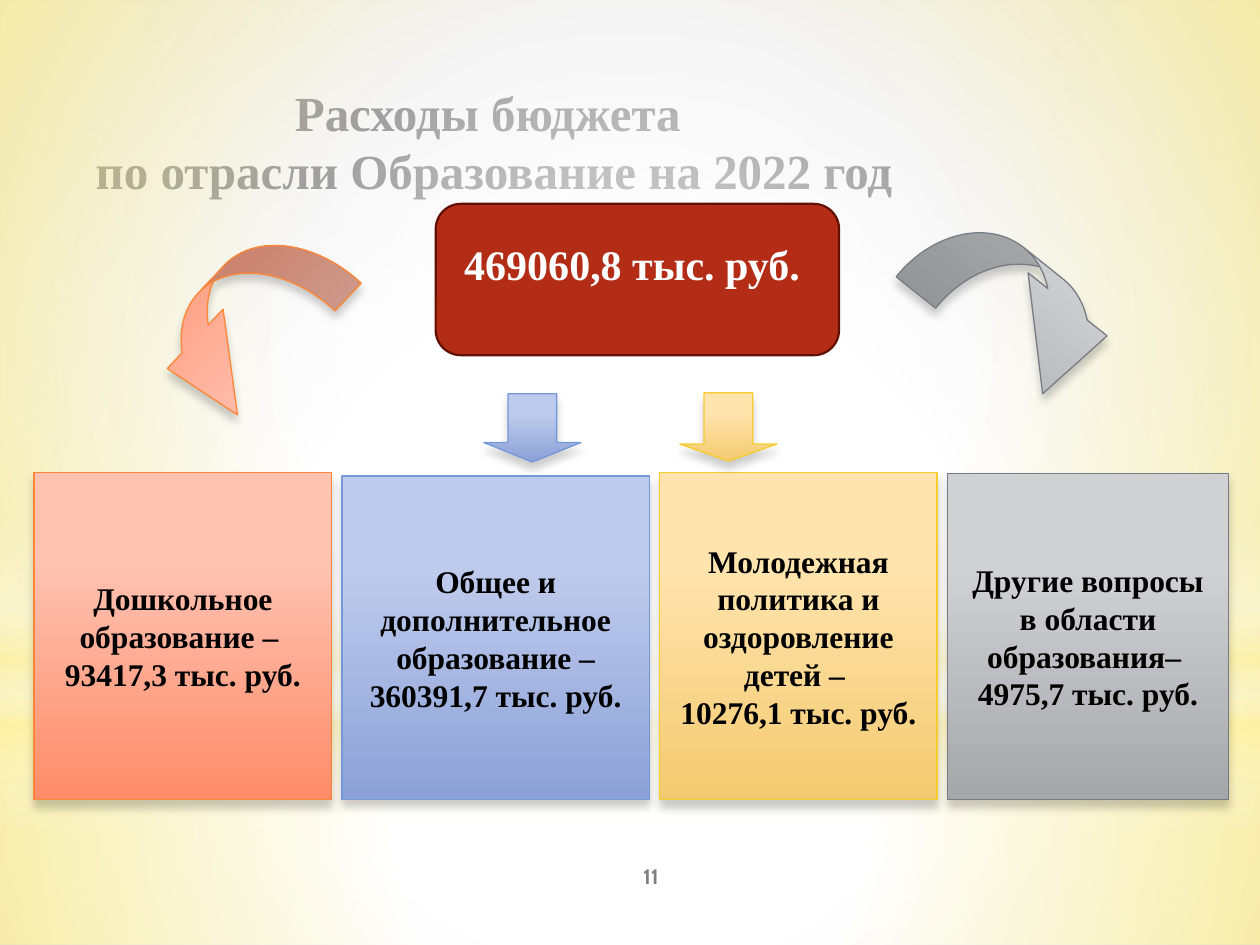
from pptx import Presentation
from pptx.dml.color import RGBColor
from pptx.enum.shapes import MSO_SHAPE as Kind
from pptx.enum.text import MSO_ANCHOR, MSO_AUTO_SIZE, PP_ALIGN
from pptx.oxml import parse_xml
from pptx.oxml.ns import nsdecls
from pptx.util import Pt

hues = {
    "white": "FFFFFF", "mist": "D1D1D1", "cream": "FFF39D",
    "black": "000000", "page": "808080", "red": "B32C16", "wine": "610F01",
    "coral": ("FFC1B0", "FE8C69", "FE8637"),
    "blue": ("BFCBED", "8CA1D7", "7598D9"),
    "gold": ("FFE4AE", "F4CA70", "F5CD2D"),
    "gray": ("D0D1D3", "A5A7AB", "777C84"),
}


def blend(old, stops, rect=None):
    marks = "".join(
        f'<a:gs pos="{at * 1000}"><a:srgbClr val="{hue}">'
        f'<a:alpha val="{alpha * 1000}"/></a:srgbClr></a:gs>'
        for at, hue, alpha in stops)
    if rect:
        sides = " ".join(f'{s}="{v * 1000}"' for s, v in zip("ltrb", rect))
        way = f'<a:path path="circle"><a:fillToRect {sides}/></a:path>'
    else:
        way = '<a:lin ang="5400000" scaled="0"/>'
    old.getparent().replace(old, parse_xml(
        f'<a:gradFill {nsdecls("a")} rotWithShape="1">'
        f'<a:gsLst>{marks}</a:gsLst>{way}</a:gradFill>'))


def write(shape, lines, size, hue, face, pads):
    frame = shape.text_frame
    form = {"word_wrap": True, "auto_size": MSO_AUTO_SIZE.NONE,
            "vertical_anchor": MSO_ANCHOR.MIDDLE}
    sides = ("margin_left", "margin_top", "margin_right", "margin_bottom")
    form.update(zip(sides, map(Pt, pads)))
    for key, val in form.items():
        setattr(frame, key, val)
    frame.text = "\n".join(lines)
    for para in frame.paragraphs:
        para.alignment = PP_ALIGN.CENTER
        for run in para.runs:
            for key, val in {"size": Pt(size), "bold": True, "name": face}.items():
                setattr(run.font, key, val)
            run.font.color.rgb = RGBColor.from_string(hues[hue])


deck = Presentation()
deck.slide_width, deck.slide_height = Pt(720), Pt(540)
slide = deck.slides.add_slide(deck.slide_layouts[5])
shapes = slide.shapes
serif = "Times New Roman"
white, cream = hues["white"], hues["cream"]
mid = (50, 50, 50, 50)

fill = slide.background.fill
fill.solid()
blend(slide.background._cSld.find(".//{*}bgPr/{*}solidFill"),
      [(0, white, 100), (42, white, 100), (100, hues["mist"], 100)],
      (24, 44, 24, 12))

layers = [
    (Kind.RECTANGLE, 402, 138,
     [(0, white, 91), (37, white, 76), (100, cream, 79)], mid),
    (Kind.RECTANGLE, 0, 402,
     [(0, white, 89), (48, white, 62), (100, cream, 79)], mid),
    (Kind.RECTANGLE, 296.5, 180,
     [(0, white, 0), (29, white, 30), (45, cream, 40),
      (55, white, 26), (65, cream, 60), (100, white, 0)], None),
    (Kind.OVAL, 126, 402, [(0, white, 100), (56, white, 0)], mid),
]
for kind, top, high, stops, rect in layers:
    glow = shapes.add_shape(kind, 0, Pt(top), Pt(720), Pt(high))
    glow.shadow.inherit = False
    glow.line.fill.background()
    glow.fill.solid()
    blend(glow._element.spPr.find("{*}solidFill"), stops, rect)

total = shapes.add_shape(Kind.ROUNDED_RECTANGLE, Pt(249), Pt(116.5), Pt(230.5), Pt(86.5))
total.shadow.inherit = False
total.fill.solid()
total.fill.fore_color.rgb = RGBColor.from_string(hues["red"])
total.line.color.rgb = RGBColor.from_string(hues["wine"])
total.line.width = Pt(1.25)
write(total, ["469060,8 тыс. руб. "], 24, "white", serif, (10, 3.6, 10, 22))

arrows = [
    (Kind.CURVED_UP_ARROW, 76.5, 154, 126.5, 64, "coral", 133.2, (0.34, 0.727, 0.74), None),
    (Kind.CURVED_DOWN_ARROW, 515.5, 148.5, 136, 58.5, "gray", 38.6, (0.492, 0.987, 0.834), None),
    (Kind.DOWN_ARROW, 388.5, 224.5, 55.5, 39, "gold", 0, (0.5, 0.25), None),
    (Kind.DOWN_ARROW, 276.5, 225, 55.5, 39, "blue", 0, (0.5, 0.285), None),
]
cards = [
    (170, 187, "coral", ["Дошкольное образование – ", "93417,3 тыс. руб."]),
    (175.5, 185, "blue", ["Общее и дополнительное", "образование –\v360391,7 тыс. руб."]),
    (158.5, 187, "gold", ["Молодежная политика и оздоровление детей – ", "10276,1 тыс. руб."]),
    (160.5, 186.5, "gray", ["Другие вопросы в области образования– ", "4975,7 тыс. руб."]),
]
left, gap, base = 19.5, 6, 457
items = []
for wide, high, hue, lines in cards:
    items.append((Kind.RECTANGLE, left, base - high, wide, high, hue, 0, (), lines))
    left += wide + gap

for kind, x, y, wide, high, hue, turn, bends, lines in items + arrows:
    item = shapes.add_shape(kind, Pt(x), Pt(y), Pt(wide), Pt(high))
    item.rotation = turn
    for spot, bend in enumerate(bends):
        item.adjustments[spot] = bend
    light, dark, edge = hues[hue]
    item.line.color.rgb = RGBColor.from_string(edge)
    item.line.width = Pt(0.75)
    item.fill.solid()
    props = item._element.spPr
    blend(props.find("{*}solidFill"), [(28, light, 100), (100, dark, 100)])
    item.shadow.inherit = False
    props.find("{*}effectLst").append(parse_xml(
        f'<a:outerShdw {nsdecls("a")} blurRad="{Pt(5)}" dist="{Pt(4)}" '
        f'dir="5400000" rotWithShape="0"><a:srgbClr val="{hues["black"]}">'
        '<a:alpha val="20000"/></a:srgbClr></a:outerShdw>'))
    if lines:
        write(item, lines, 18, "black", serif, (8.6, 0, 8.6, 0))

page = shapes.add_textbox(Pt(300), Pt(486), Pt(144), Pt(29))
write(page, ["11"], 12, "page", "Cabin", (7.2, 3.6, 7.2, 3.6))

title = shapes.title
place = {"left": 39.5, "top": 43, "width": 485.5, "height": 75}
for key, val in place.items():
    setattr(title, key, Pt(val))
write(title, ["Расходы бюджета \vпо отрасли Образование на 2022 год"],
      28, "black", serif, (7.2, 3.6, 7.2, 3.6))

deck.save("out.pptx")
